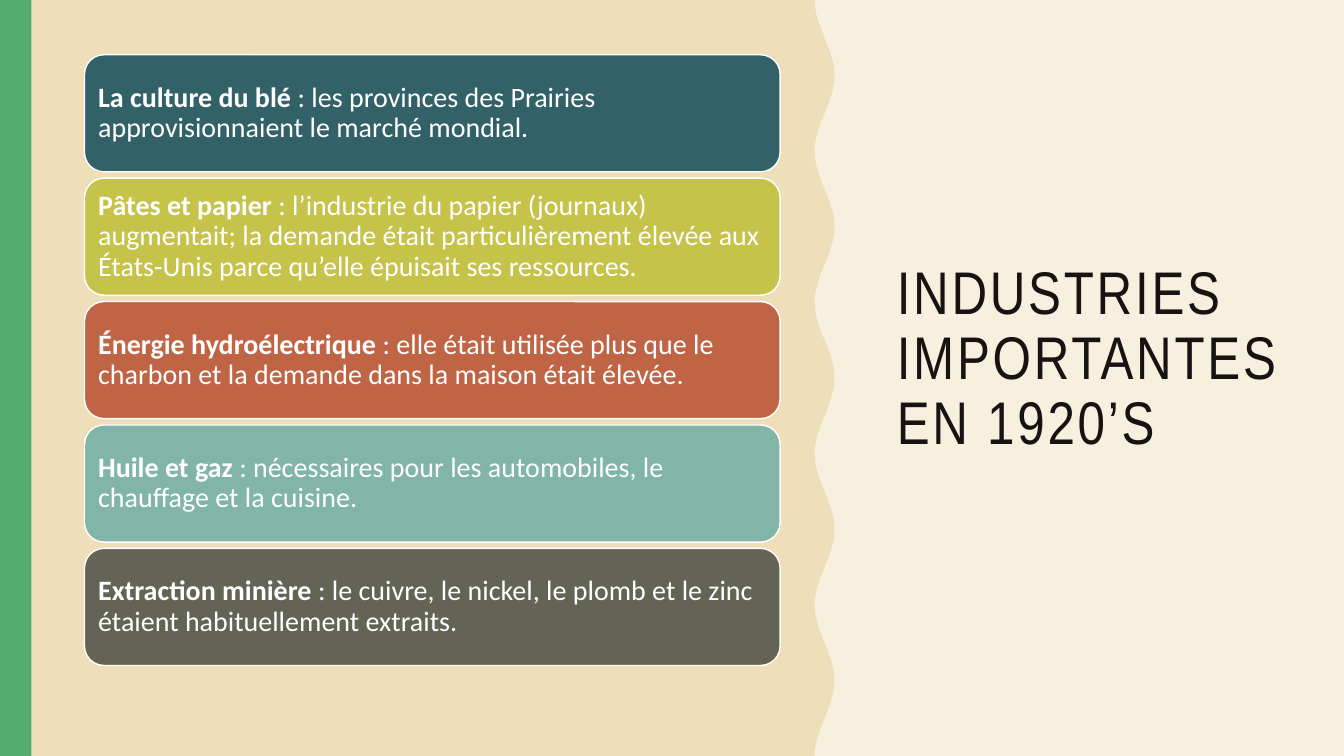
from math import cos, pi

from pptx import Presentation
from pptx.dml.color import RGBColor
from pptx.enum.shapes import MSO_SHAPE
from pptx.enum.text import MSO_ANCHOR, PP_ALIGN
from pptx.util import Cm, Pt

TITLE = "INDUSTRIES IMPORTANTES EN 1920’S"
INDUSTRIES = [
    ("La culture du blé ", ": les provinces des Prairies approvisionnaient le marché mondial.", "wheat"),
    ("Pâtes et papier ", ": l’industrie du papier (journaux) augmentait; la demande était particulièrement "
     "élevée aux États-Unis parce qu’elle épuisait ses ressources.", "paper"),
    ("Énergie hydroélectrique ", ": elle était utilisée plus que le charbon et la demande dans la maison "
     "était élevée.", "hydro"),
    ("Huile et gaz ", ": nécessaires pour les automobiles, le chauffage et la cuisine.", "oil"),
    ("Extraction minière ", ": le cuivre, le nickel, le plomb et le zinc étaient habituellement extraits.",
     "mining"),
]
COLORS = {
    "cream": "F7F0DF", "sand": "EEDEB9", "green": "53AE6E", "ink": "171312", "white": "FFFFFF",
    "wheat": "326267", "paper": "C5C34A", "hydro": "BF6546", "oil": "81B5A8", "mining": "636455",
}
SLIDE_WIDTH, SLIDE_HEIGHT = 33.87, 19.05
WAVE = {"middle": 20.78, "swing": 0.25, "period": 3.81, "steps": 120}
CARD = {"left": 2.13, "top": 1.38, "width": 17.53, "height": 2.95, "pitch": 3.11}
TITLE_AREA = (22.35, 1.35, 10.16, 15.47)
CARD_FRAME = {
    "word_wrap": True, "vertical_anchor": MSO_ANCHOR.MIDDLE, "margin_left": Cm(0.2),
    "margin_right": Cm(0.2), "margin_top": Cm(0.2), "margin_bottom": Cm(0.2),
}
TITLE_FRAME = {
    "word_wrap": True, "vertical_anchor": MSO_ANCHOR.MIDDLE,
    "margin_left": Cm(0.25), "margin_right": Cm(0.1),
}
PARAGRAPH = {"alignment": PP_ALIGN.LEFT, "line_spacing": 0.9}
CARD_FONT = {"name": "Calibri", "size": Pt(20)}
TITLE_FONT = {"name": "Arial Narrow", "size": Pt(43), "bold": False}


def color(name):
    return RGBColor.from_string(COLORS[name])


def apply(target, values):
    for name, value in values.items():
        setattr(target, name, value)


def paint(shape, fill, line=None):
    shape.shadow.inherit = False
    shape.fill.solid()
    shape.fill.fore_color.rgb = color(fill)
    if line:
        shape.line.color.rgb = color(line)
        shape.line.width = Pt(1)
    else:
        shape.line.fill.background()


def write(para, text, font, ink):
    span = para.add_run()
    span.text = text
    apply(span.font, font)
    span.font.color.rgb = color(ink)
    return span


def add_wave(page):
    edge = []
    for step in range(WAVE["steps"] + 1):
        y = SLIDE_HEIGHT * step / WAVE["steps"]
        x = WAVE["middle"] - WAVE["swing"] * cos(2 * pi * y / WAVE["period"])
        edge.append((Cm(x), Cm(y)))
    builder = page.shapes.build_freeform(0, 0)
    builder.add_line_segments(edge + [(0, Cm(SLIDE_HEIGHT))], close=True)
    paint(builder.convert_to_shape(), "sand")


def add_card(page, index, heading, detail, fill):
    top = CARD["top"] + index * CARD["pitch"]
    area = (CARD["left"], top, CARD["width"], CARD["height"])
    card = page.shapes.add_shape(MSO_SHAPE.ROUNDED_RECTANGLE, *map(Cm, area))
    paint(card, fill, "white")
    apply(card.text_frame, CARD_FRAME)
    para = card.text_frame.paragraphs[0]
    apply(para, PARAGRAPH)
    for text, bold in ((heading, True), (detail, False)):
        write(para, text, CARD_FONT | {"bold": bold}, "white")


def add_title(page):
    box = page.shapes.add_textbox(*map(Cm, TITLE_AREA))
    apply(box.text_frame, TITLE_FRAME)
    para = box.text_frame.paragraphs[0]
    apply(para, PARAGRAPH)
    span = write(para, TITLE, TITLE_FONT, "ink")
    span.font._element.set("spc", "200")


def main():
    deck = Presentation()
    apply(deck, {"slide_width": Cm(SLIDE_WIDTH), "slide_height": Cm(SLIDE_HEIGHT)})
    page = deck.slides.add_slide(deck.slide_layouts[6])
    page.background.fill.solid()
    page.background.fill.fore_color.rgb = color("cream")
    add_title(page)
    add_wave(page)
    stripe = page.shapes.add_shape(MSO_SHAPE.RECTANGLE, 0, 0, Cm(0.79), Cm(SLIDE_HEIGHT))
    paint(stripe, "green")
    for index, industry in enumerate(INDUSTRIES):
        add_card(page, index, *industry)
    deck.save("out.pptx")


if __name__ == "__main__":
    main()
